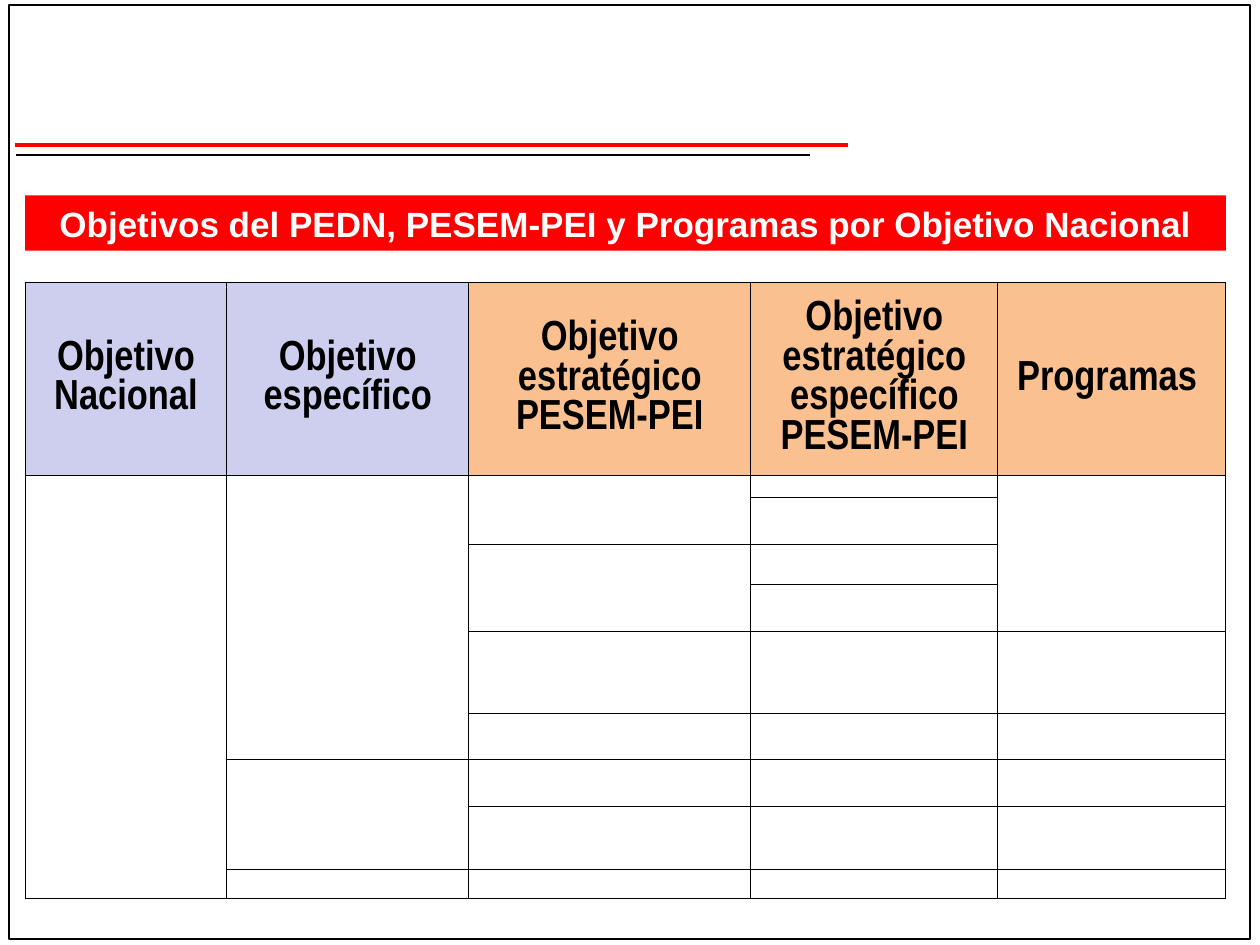
from lxml import etree
from pptx import Presentation, util as u
from pptx.dml.color import RGBColor
from pptx.enum import shapes, text
from pptx.oxml import ns

INK = {"black": "000000", "red": "FF0000", "white": "FFFFFF",
       "lilac": "CECEEF", "peach": "FAC090"}
WIDE, HIGH = 10, 7.5
LEFT, SPAN = 0.2, 9.53
COLS = [1.6, 1.92, 2.24, 1.96, 1.81]
ROWS = [1.53, 0.18, 0.37, 0.32, 0.37, 0.65, 0.37, 0.37, 0.5, 0.23]
HEADS = [("Objetivo Nacional", "lilac"), ("Objetivo específico", "lilac"),
         ("Objetivo estratégico PESEM-PEI", "peach"),
         ("Objetivo estratégico específico PESEM-PEI", "peach"),
         ("Programas ", "peach")]
MERGES = [(1, 0, 9), (1, 1, 6), (7, 1, 2), (1, 2, 2), (3, 2, 2), (1, 4, 4)]


def tint(name):
    return RGBColor.from_string(INK[name])


def child(node, tag, **attrs):
    return etree.SubElement(node, ns.qn(tag), **attrs)


def write(frame, words, size=20, font="Arial", ink="black", bold=True):
    para = frame.paragraphs[0]
    para.alignment = text.PP_ALIGN.CENTER
    run = para.add_run()
    run.text = words
    run.font.size = u.Pt(size)
    run.font.name = font
    run.font.bold = bold
    run.font.color.rgb = tint(ink)


def box(slide, left, top, width, height, fill=None, line=None):
    rect = slide.shapes.add_shape(shapes.MSO_SHAPE.RECTANGLE, u.Inches(left),
                                  u.Inches(top), u.Inches(width), u.Inches(height))
    rect.shadow.inherit = False
    if fill:
        rect.fill.solid()
        rect.fill.fore_color.rgb = tint(fill)
    else:
        rect.fill.background()
    if line:
        rect.line.color.rgb = tint(line)
        rect.line.width = u.Pt(1)
    else:
        rect.line.fill.background()
    return rect


def rule(slide, left, right, top, ink, width):
    line = slide.shapes.add_connector(shapes.MSO_CONNECTOR.STRAIGHT, u.Inches(left),
                                      u.Inches(top), u.Inches(right), u.Inches(top))
    line.line.color.rgb = tint(ink)
    line.line.width = u.Pt(width)
    child(line._element.spPr, "a:effectLst")


def frame(cell):
    props = cell._tc.get_or_add_tcPr()
    for side in ("L", "R", "T", "B"):
        edge = child(props, "a:ln" + side, w=str(u.Pt(0.5)))
        child(child(edge, "a:solidFill"), "a:srgbClr", val=INK["black"])


def style(cell):
    frame(cell)
    cell.fill.background()
    cell.vertical_anchor = text.MSO_ANCHOR.MIDDLE
    cell.margin_left = cell.margin_right = cell.margin_top = u.Inches(0.01)
    cell.margin_bottom = 0


def grid(slide):
    table = slide.shapes.add_table(len(ROWS), len(COLS), u.Inches(LEFT), u.Inches(2.24),
                                   u.Inches(SPAN), u.Inches(sum(ROWS))).table
    table.first_row = table.horz_banding = False
    for col, width in zip(table.columns, COLS):
        col.width = u.Inches(width)
    for row, height in zip(table.rows, ROWS):
        row.height = u.Inches(height)
        for cell in row.cells:
            style(cell)
    for cell, (words, fill) in zip(table.rows[0].cells, HEADS):
        cell.fill.solid()
        cell.fill.fore_color.rgb = tint(fill)
        write(cell.text_frame, words, size=24, font="Arial Narrow")
    for row in list(table.rows)[1:]:
        for cell in row.cells:
            child(cell.text_frame.paragraphs[0]._p, "a:endParaRPr", sz="800")
    for row, col, count in MERGES:
        table.cell(row, col).merge(table.cell(row + count - 1, col))


def main():
    deck = Presentation()
    deck.slide_width, deck.slide_height = u.Inches(WIDE), u.Inches(HIGH)
    slide = deck.slides.add_slide(deck.slide_layouts[6])
    box(slide, 0.07, 0.04, 9.85, 7.41, line="black")
    rule(slide, 0.12, 6.73, 1.15, "red", 2.25)
    rule(slide, 0.13, 6.43, 1.23, "black", 1)
    grid(slide)
    title = box(slide, LEFT, 1.55, SPAN, 0.44, fill="red").text_frame
    title.word_wrap = True
    title.vertical_anchor = text.MSO_ANCHOR.MIDDLE
    write(title, "Objetivos del PEDN, PESEM-PEI y Programas por Objetivo Nacional",
          ink="white")
    deck.save("out.pptx")


if __name__ == "__main__":
    main()
